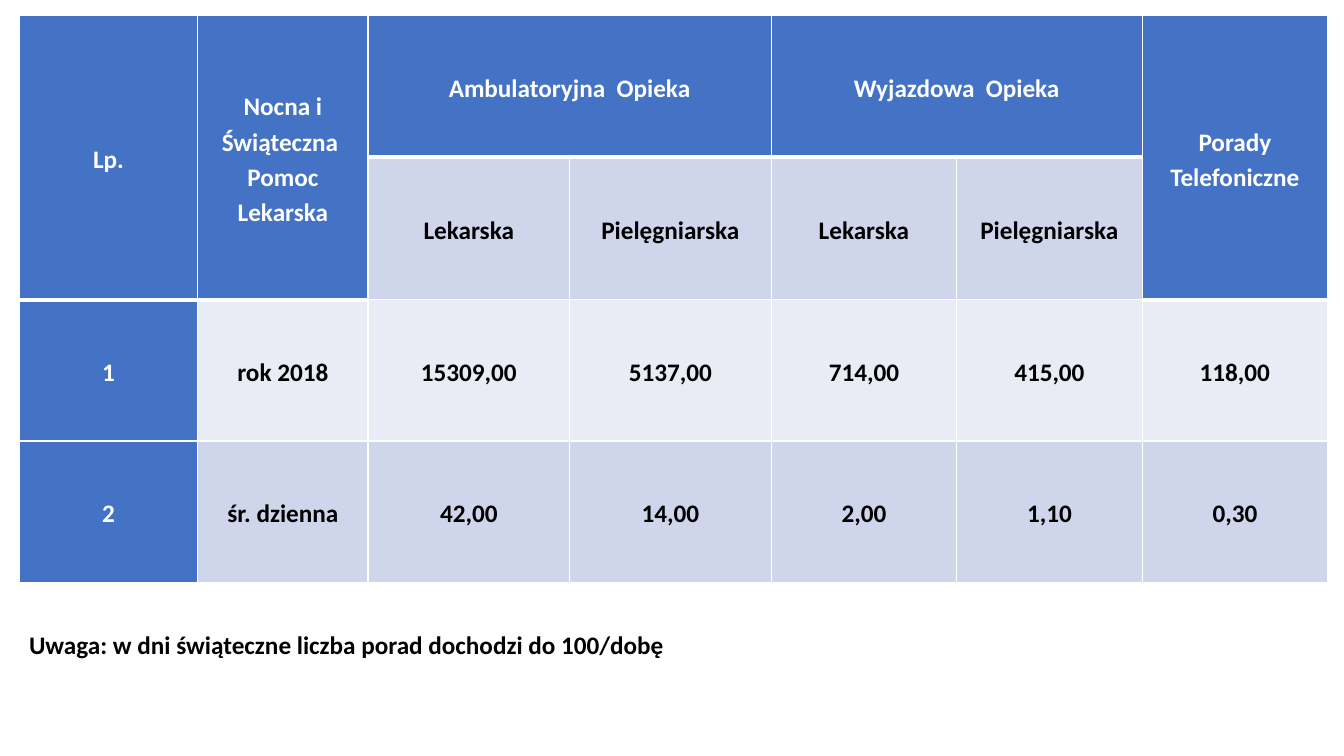
import pptx
import pptx.util
import pptx.dml.color
import pptx.enum.text
import pptx.oxml
import pptx.oxml.ns

Pt = pptx.util.Pt
RGBColor = pptx.dml.color.RGBColor
WHITE = RGBColor(0xFF, 0xFF, 0xFF)
BLACK = RGBColor(0x00, 0x00, 0x00)
BLUE = RGBColor(0x44, 0x72, 0xC4)
DARK_BAND = RGBColor(0xCF, 0xD5, 0xEA)
LIGHT_BAND = RGBColor(0xE9, 0xEB, 0xF5)

COLUMN_WIDTHS = [127.6, 121.6, 144, 144, 132.5, 132.5, 132.5]
ROW_HEIGHTS = [100.8, 102.2, 100.8, 100.8]
ROWS = [
    ["Lp.", "Nocna i\nŚwiąteczna \nPomoc\nLekarska", "Ambulatoryjna  Opieka", "",
     "Wyjazdowa  Opieka", "", "Porady Telefoniczne"],
    ["", "", "Lekarska", "Pielęgniarska", "Lekarska", "Pielęgniarska", ""],
    ["1", "rok 2018", "15309,00", "5137,00", "714,00", "415,00", "118,00"],
    ["2", "śr. dzienna", "42,00", "14,00", "2,00", "1,10", "0,30"],
]
TALL_HEADERS = (0, 1, 6)
WIDE_HEADERS = (2, 4)


def write_text(text_frame, text, color=BLACK, alignment=pptx.enum.text.PP_ALIGN.LEFT,
               line_spacing=1.0, size=18):
    text_frame.word_wrap = True
    for index, line in enumerate(text.split("\n")):
        paragraph = text_frame.add_paragraph() if index else text_frame.paragraphs[0]
        paragraph.alignment = alignment
        paragraph.line_spacing = line_spacing
        run = paragraph.add_run()
        run.text = line
        run.font.name = "Calibri"
        run.font.size = Pt(size)
        run.font.bold = True
        run.font.color.rgb = color


def set_borders(cell, bottom_width):
    properties = cell._tc.get_or_add_tcPr()
    for side, width in (("L", 1), ("R", 1), ("T", 1), ("B", bottom_width)):
        properties.append(pptx.oxml.parse_xml(
            f'<a:ln{side} {pptx.oxml.ns.nsdecls("a")} w="{Pt(width)}">'
            f'<a:solidFill><a:srgbClr val="{WHITE}"/></a:solidFill></a:ln{side}>'))


def add_care_table(slide, left, top):
    shape = slide.shapes.add_table(
        len(ROWS), len(COLUMN_WIDTHS), Pt(left), Pt(top),
        Pt(sum(COLUMN_WIDTHS)), Pt(sum(ROW_HEIGHTS)))
    table = shape.table
    for column, width in zip(table.columns, COLUMN_WIDTHS):
        column.width = Pt(width)
    for row, height in zip(table.rows, ROW_HEIGHTS):
        row.height = Pt(height)
    for column in TALL_HEADERS:
        table.cell(0, column).merge(table.cell(1, column))
    for column in WIDE_HEADERS:
        table.cell(0, column).merge(table.cell(0, column + 1))

    for row, texts in enumerate(ROWS):
        for column, text in enumerate(texts):
            cell = table.cell(row, column)
            in_header = row == 0 or (row == 1 and column in TALL_HEADERS)
            is_blue = in_header or column == 0
            set_borders(cell, 3 if in_header else 1)
            cell.fill.solid()
            cell.fill.fore_color.rgb = BLUE if is_blue else LIGHT_BAND if row == 2 else DARK_BAND
            cell.margin_left = cell.margin_right = Pt(3.6)
            cell.margin_top = cell.margin_bottom = 0
            cell.vertical_anchor = pptx.enum.text.MSO_ANCHOR.MIDDLE
            if text:
                write_text(cell.text_frame, text, color=WHITE if is_blue else BLACK,
                           alignment=pptx.enum.text.PP_ALIGN.CENTER, line_spacing=1.15)


def add_note(slide, left, top, width, height):
    text_box = slide.shapes.add_textbox(Pt(left), Pt(top), Pt(width), Pt(height))
    text_box.text_frame.margin_top = Pt(36)
    write_text(text_box.text_frame,
               "Uwaga: w dni świąteczne liczba porad dochodzi do 100/dobę", line_spacing=0.9)


def main():
    presentation = pptx.Presentation()
    presentation.slide_width = Pt(960)
    presentation.slide_height = Pt(540)
    slide = presentation.slides.add_slide(presentation.slide_layouts[6])
    add_care_table(slide, 13.7, 11.2)
    add_note(slide, 13.7, 416.2, 828, 118)
    presentation.save("out.pptx")


if __name__ == "__main__":
    main()
